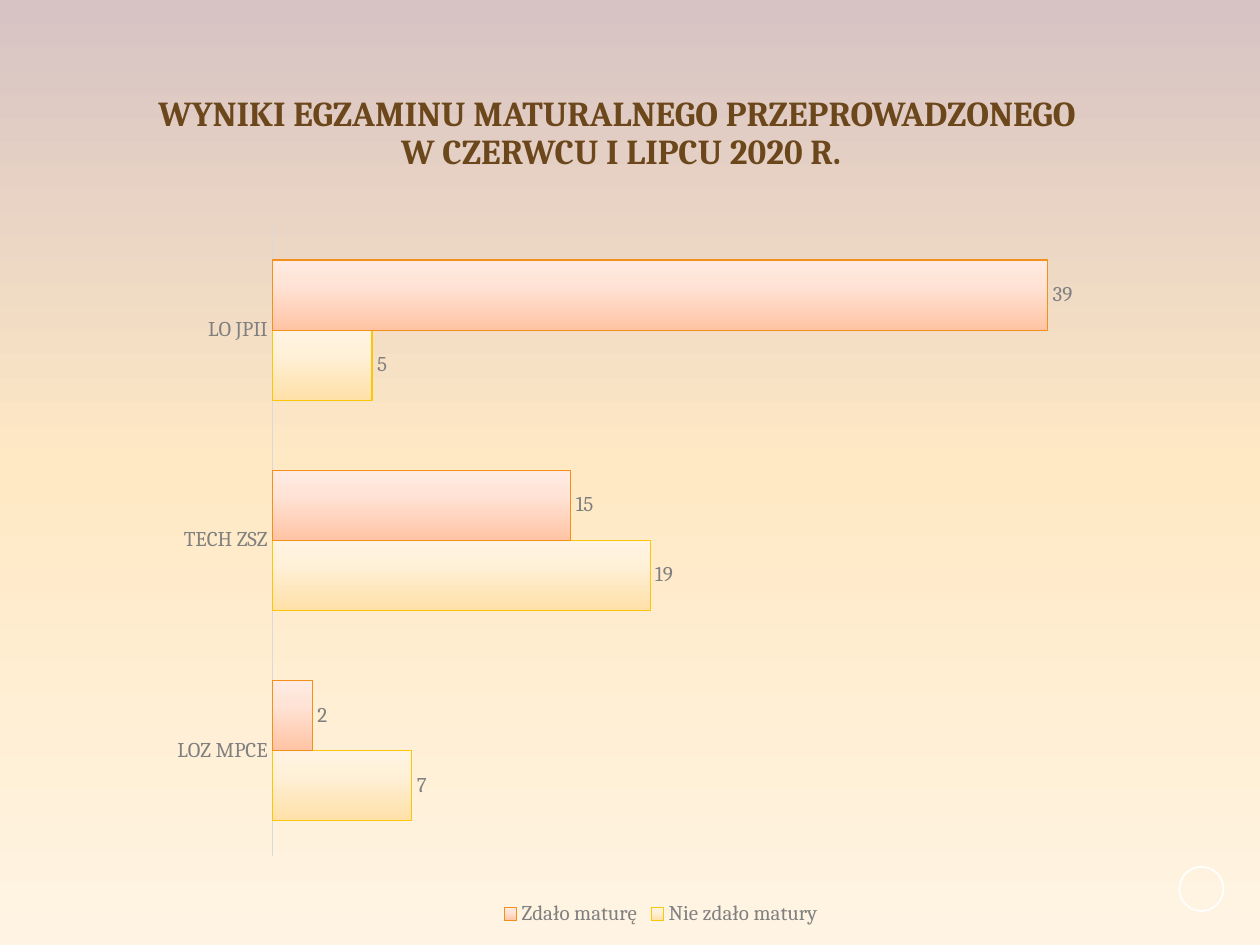
from lxml import etree
from pptx import Presentation
from pptx.chart.data import CategoryChartData
from pptx.dml.color import RGBColor
from pptx.enum.chart import XL_CHART_TYPE, XL_LABEL_POSITION, XL_LEGEND_POSITION, XL_TICK_MARK
from pptx.enum.shapes import MSO_SHAPE
from pptx.enum.text import MSO_ANCHOR, PP_ALIGN
from pptx.oxml.ns import qn
from pptx.util import Inches, Pt

BAR = XL_CHART_TYPE.BAR_CLUSTERED
OUTSIDE = XL_LABEL_POSITION.OUTSIDE_END
BOTTOM = XL_LEGEND_POSITION.BOTTOM
NO_TICK = XL_TICK_MARK.NONE
ELLIPSE = MSO_SHAPE.OVAL
MIDDLE = MSO_ANCHOR.MIDDLE
CENTER = PP_ALIGN.CENTER

FONT = "Cambria"
COLORS = {
    "title": "6B471B",
    "text": "808080",
    "axis": "D9D9D9",
    "ring": "FFFFFF",
    "failed": "F9C608",
    "passed": "F3901C",
}
GRADIENTS = {
    "page": [(0, "D7C3C3"), (50, "FFE9C5"), (100, "FFF4E3")],
    "failed": [(0, "FFE0A7"), (65, "FFF0D8"), (100, "FFF4E4")],
    "passed": [(0, "FFC4A4"), (65, "FFE3D6"), (100, "FFEBE2")],
}
SCHOOLS = ["LOZ MPCE", "TECH ZSZ", "LO JPII"]
RESULTS = [
    ("failed", "Nie zdało matury", (7, 19, 5)),
    ("passed", "Zdało maturę", (2, 15, 39)),
]
PLOT_AREA = {"x": 0.132, "y": 0.017, "w": 0.848, "h": 0.878}


def rgb(name):
    return RGBColor.from_string(COLORS[name])


def format_font(font, size, color, bold=False):
    font.name = FONT
    font.size = Pt(size)
    font.bold = bold
    font.color.rgb = rgb(color)


def format_line(line, color, width):
    line.color.rgb = rgb(color)
    line.width = Pt(width)


def fill_gradient(fill, owner, stops, angle):
    fill.gradient()
    fill.gradient_angle = angle
    stop_list = next(owner.iter(qn("a:gsLst")))
    for stop in list(stop_list):
        stop_list.remove(stop)
    for position, color in stops:
        stop = etree.SubElement(stop_list, qn("a:gs"), pos=str(position * 1000))
        etree.SubElement(stop, qn("a:srgbClr"), val=color)


def write_title(page, text):
    title = page.shapes.title
    title.left, title.top = Inches(0.43), Inches(0.44)
    title.width, title.height = Inches(9), Inches(1.25)
    title.text_frame.vertical_anchor = MIDDLE
    para = title.text_frame.paragraphs[0]
    para.text = text
    para.alignment = CENTER
    para.line_spacing = 0.9
    for span in para.runs:
        format_font(span.font, 20, "title", bold=True)


def add_ring(page):
    ring = page.shapes.add_shape(
        ELLIPSE, Inches(9.36), Inches(6.88), Inches(0.35), Inches(0.35))
    ring.shadow.inherit = False
    ring.fill.background()
    format_line(ring.line, "ring", 1)


def place_plot(chart):
    plot_area = next(chart._chartSpace.iter(qn("c:plotArea")))
    for old in plot_area.findall(qn("c:layout")):
        plot_area.remove(old)
    layout = etree.Element(qn("c:layout"))
    manual = etree.SubElement(layout, qn("c:manualLayout"))
    settings = {"layoutTarget": "inner", "xMode": "edge", "yMode": "edge", **PLOT_AREA}
    for tag, value in settings.items():
        etree.SubElement(manual, qn(f"c:{tag}"), val=str(value))
    plot_area.insert(0, layout)


def format_series(series, key):
    fill_gradient(series.format.fill, series._element, GRADIENTS[key], 90)
    format_line(series.format.line, key, 0.75)
    series.invert_if_negative = False
    labels = series.data_labels
    labels.show_value = True
    labels.position = OUTSIDE
    format_font(labels.font, 12, "text")


def add_results_chart(page):
    data = CategoryChartData()
    data.categories = SCHOOLS
    for key, name, values in RESULTS:
        data.add_series(name, values)
    chart = page.shapes.add_chart(
        BAR, Inches(1.06), Inches(1.69), Inches(8.37), Inches(5.7), data).chart
    chart.has_title = False
    format_font(chart.font, 12, "text")

    chart.has_legend = True
    chart.legend.position = BOTTOM
    chart.legend.include_in_layout = False
    format_font(chart.legend.font, 12, "text")

    schools = chart.category_axis
    schools.major_tick_mark = schools.minor_tick_mark = NO_TICK
    schools.has_major_gridlines = False
    format_line(schools.format.line, "axis", 0.75)
    format_font(schools.tick_labels.font, 12, "text")

    counts = chart.value_axis
    counts.visible = False
    counts.has_major_gridlines = False
    counts.minimum_scale, counts.maximum_scale = 0, 45

    plot = chart.plots[0]
    plot.gap_width = 100
    plot.vary_by_categories = False
    for series, (key, name, values) in zip(plot.series, RESULTS):
        format_series(series, key)
    place_plot(chart)


def main():
    deck = Presentation()
    deck.slide_width, deck.slide_height = Inches(10), Inches(7.5)
    page = deck.slides.add_slide(deck.slide_layouts[5])
    fill_gradient(page.background.fill, page._element, GRADIENTS["page"], 270)
    add_ring(page)
    write_title(page, "WYNIKI EGZAMINU MATURALNEGO PRZEPROWADZONEGO \nW CZERWCU I LIPCU 2020 R.")
    add_results_chart(page)
    deck.save("out.pptx")


if __name__ == "__main__":
    main()
